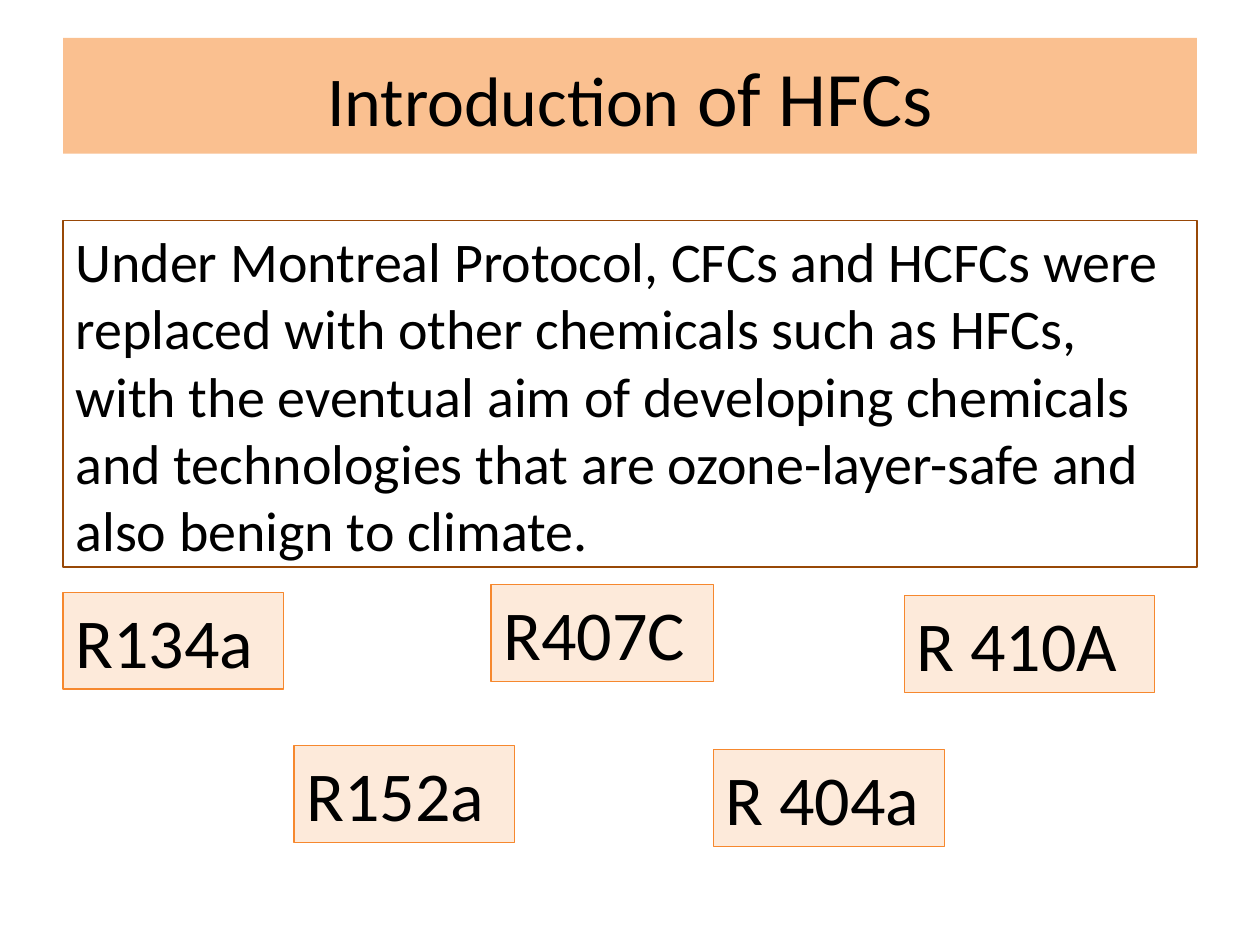
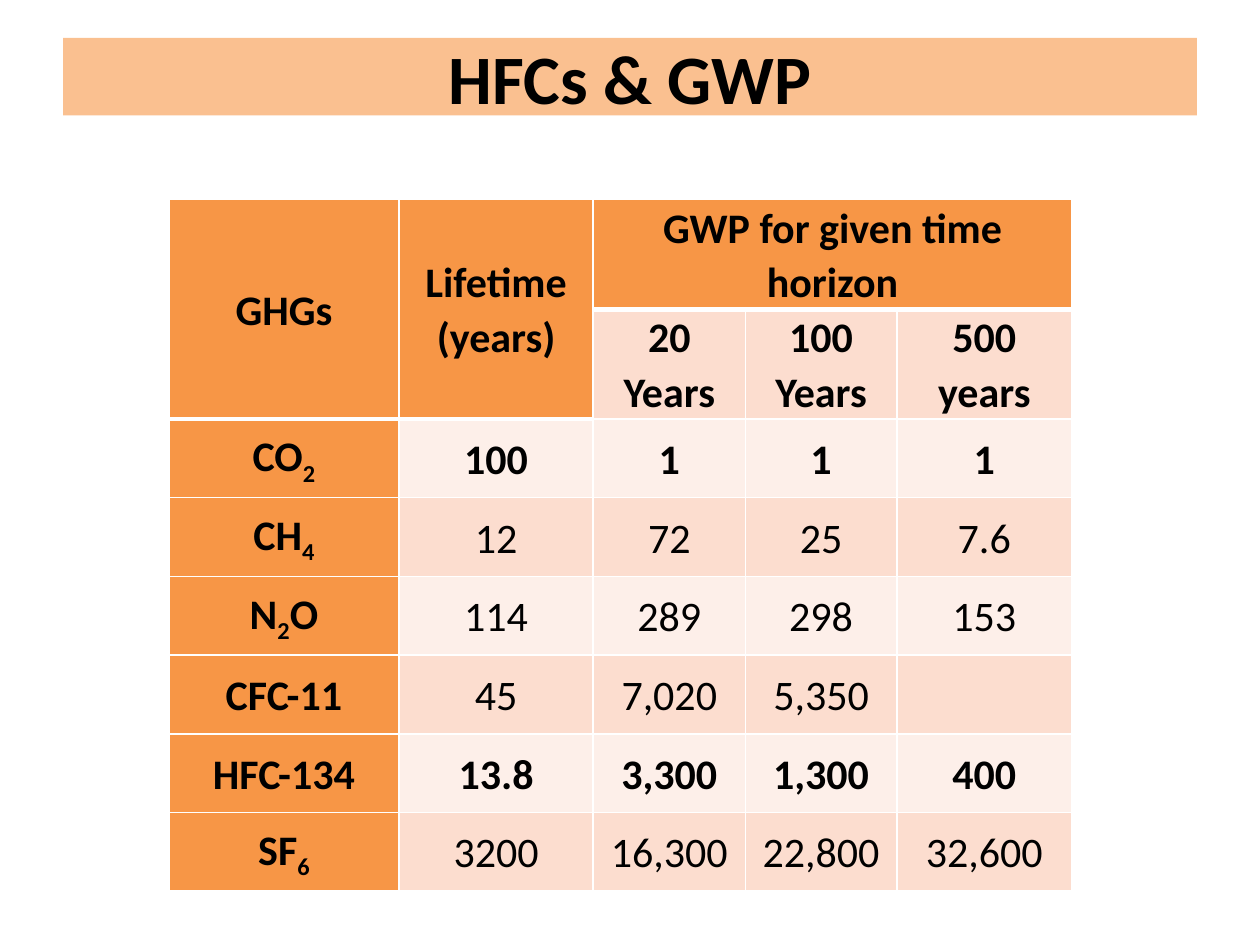
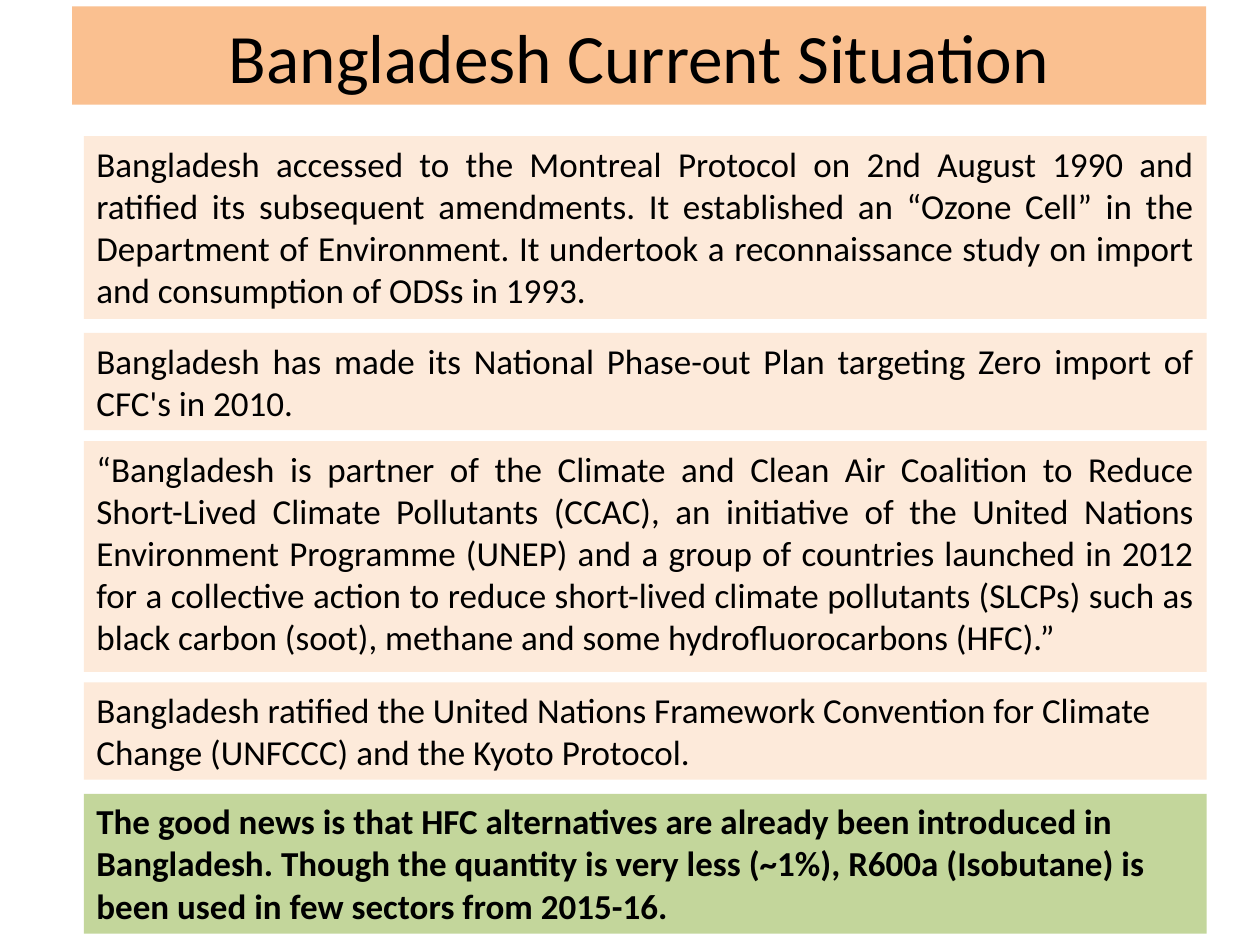
from dataclasses import dataclass

from lxml.etree import SubElement
from pptx import Presentation
from pptx.dml.color import RGBColor
from pptx.enum.text import MSO_ANCHOR, MSO_AUTO_SIZE, PP_ALIGN
from pptx.oxml.ns import qn
from pptx.util import Pt

FONT = "Calibri"
BLACK, WHITE = "000000", "FFFFFF"
BAND, PALE, GREEN = "FAC090", "FDEADA", "C3D69B"
BROWN, ORANGE = "984807", "F6882E"
HEAD, ODD, EVEN = "F79646", "FCDDCF", "FDEFE9"


@dataclass
class Box:
    left: float
    top: float
    width: float
    height: float
    text: str
    size: float
    fill: str = ""
    line: str = ""
    align: PP_ALIGN = PP_ALIGN.LEFT
    bold: bool = False
    before: float = 0


def color(code: str) -> RGBColor:
    return RGBColor.from_string(code)


def paint(item, code: str) -> None:
    item.fill.solid()
    item.fill.fore_color.rgb = color(code)


def style(para, size: float, align: PP_ALIGN, bold: bool = False) -> None:
    para.alignment = align
    font = para.font
    font.name, font.size, font.bold = FONT, Pt(size), bold
    font.color.rgb = color(BLACK)


def add_box(slide, box: Box) -> None:
    shape = slide.shapes.add_textbox(
        Pt(box.left), Pt(box.top), Pt(box.width), Pt(box.height))
    if box.fill:
        paint(shape, box.fill)
    if box.line:
        shape.line.color.rgb = color(box.line)
        shape.line.width = Pt(0.75)
    frame = shape.text_frame
    frame.word_wrap = True
    frame.text = box.text
    para = frame.paragraphs[0]
    style(para, box.size, box.align, box.bold)
    para.space_before = Pt(box.before)


def add_page(deck, text: str, left: float, top: float, height: float,
             size: float, bold: bool = False):
    """Add a slide whose title sits on the orange band."""
    slide = deck.slides.add_slide(deck.slide_layouts[5])
    title = slide.shapes.title
    title.left, title.top = Pt(left), Pt(top)
    title.width, title.height = Pt(648), Pt(height)
    paint(title, BAND)
    frame = title.text_frame
    frame.auto_size = MSO_AUTO_SIZE.NONE
    frame.vertical_anchor = MSO_ANCHOR.MIDDLE
    frame.text = text
    style(frame.paragraphs[0], size, PP_ALIGN.CENTER, bold)
    return slide


def edge(row: int, col: int) -> float:
    """Width of the rule below a cell: thick under the header cells."""
    return 3 if row == 0 or (row == 1 and col < 2) else 1


def set_edges(cell, row: int, col: int) -> None:
    props = cell._tc.get_or_add_tcPr()
    top = edge(row - 1, col) if row else 1
    for side, width in zip("LRTB", (1, 1, top, edge(row, col))):
        line = SubElement(props, qn(f"a:ln{side}"), w=str(Pt(width)))
        fill = SubElement(line, qn("a:solidFill"))
        SubElement(fill, qn("a:srgbClr"), val=WHITE)


def set_cell(cell, text: str, fill: str, bold: bool) -> None:
    """Fill a cell; text between underscores becomes a subscript."""
    cell.margin_left = cell.margin_right = Pt(5)
    cell.margin_top = cell.margin_bottom = 0
    cell.vertical_anchor = MSO_ANCHOR.MIDDLE
    paint(cell, fill)
    para = cell.text_frame.paragraphs[0]
    style(para, 24, PP_ALIGN.CENTER, bold)
    para.line_spacing = 1.07
    for index, part in enumerate(text.split("_")):
        if part:
            run = para.add_run()
            run.text = part
            if index % 2:
                run._r.get_or_add_rPr().set("baseline", "-25000")


def add_intro(deck) -> None:
    slide = add_page(deck, "Introduction", 36, 21.6, 66.2, 40)
    tail = slide.shapes.title.text_frame.paragraphs[0].add_run()
    tail.text = " of HFCs"
    tail.font.size = Pt(44)
    add_box(slide, Box(
        36, 126, 648, 198,
        "Under Montreal Protocol, CFCs and HCFCs were replaced with other "
        "chemicals such as HFCs, with the eventual aim of developing "
        "chemicals and technologies that are ozone-layer-safe and also "
        "benign to climate.", 32, line=BROWN, before=6.4))
    gases = [
        (36, 338.4, 126, "R134a"), (168, 426.2, 126, "R152a"),
        (280.6, 334, 127.2, "R407C"), (407.6, 428.2, 132, "R 404a"),
        (516.8, 340.2, 143, "R 410A"),
    ]
    for left, top, width, name in gases:
        add_box(slide, Box(left, top, width, 55.4, name, 40, PALE, ORANGE))


def add_gwp(deck) -> None:
    slide = add_page(deck, "HFCs & GWP", 36, 21.6, 44.4, 39.6, True)
    rows = [
        ("GHGs", "Lifetime (years)", "GWP for given time horizon", "", ""),
        ("", "", "20 Years", "100 Years", "500 years"),
        ("CO_2_", "100", "1", "1", "1"),
        ("CH_4_", "12", "72", "25", "7.6"),
        ("N_2_O", "114", "289", "298", "153"),
        ("CFC-11", "45", "7,020", "5,350", ""),
        ("HFC-134", "13.8", "3,300", "1,300", "400"),
        ("SF_6_", "3200", "16,300", "22,800", "32,600"),
    ]
    widths = (131.5, 111, 87, 86.5, 100)
    heights = [39, 62.5] + [45] * 6
    table = slide.shapes.add_table(
        len(rows), len(widths), Pt(96.5), Pt(114),
        Pt(sum(widths)), Pt(sum(heights))).table
    table.first_row = table.horz_banding = False
    for column, width in zip(table.columns, widths):
        column.width = Pt(width)
    for line, height in zip(table.rows, heights):
        line.height = Pt(height)
    strong = {0, 1, 2, 6}
    for row, texts in enumerate(rows):
        for col, text in enumerate(texts):
            head = row == 0 or col == 0 or (row == 1 and col == 1)
            fill = HEAD if head else ODD if row % 2 else EVEN
            cell = table.cell(row, col)
            set_edges(cell, row, col)
            set_cell(cell, text, fill, col == 0 or row in strong)
    for start, end in (((0, 0), (1, 0)), ((0, 1), (1, 1)), ((0, 2), (0, 4))):
        table.cell(*start).merge(table.cell(*end))


def add_status(deck) -> None:
    slide = add_page(deck, "Bangladesh Current Situation",
                     41.2, 3.6, 56.2, 39.6)
    left, wide = 48, 641.5
    both = PP_ALIGN.JUSTIFY
    notes = [
        Box(left, 77.8, wide, 104.4,
            "Bangladesh accessed to the Montreal Protocol on 2nd August 1990 "
            "and ratified its subsequent amendments. It established an "
            "“Ozone Cell” in the Department of Environment. It undertook a "
            "reconnaissance study on import and consumption of ODSs in 1993.",
            20, PALE, align=both),
        Box(left, 190.2, wide, 55.6,
            "Bangladesh has made its National Phase-out Plan targeting Zero "
            "import of CFC's in 2010.", 20, PALE, align=both),
        Box(left, 252, wide, 132,
            "“Bangladesh is partner of the Climate and Clean Air Coalition to "
            "Reduce Short-Lived Climate Pollutants (CCAC), an initiative of "
            "the United Nations Environment Programme (UNEP) and a group of "
            "countries launched in 2012 for a collective action to reduce "
            "short-lived climate pollutants (SLCPs) such as black carbon "
            "(soot), methane and some hydrofluorocarbons (HFC).”",
            20, PALE, align=both, before=4),
        Box(left, 390, wide, 55.6,
            "Bangladesh ratified the United Nations Framework Convention for "
            "Climate Change (UNFCCC) and the Kyoto Protocol.", 20, PALE),
        Box(left, 453.6, wide, 80,
            "The good news is that HFC alternatives are already been "
            "introduced in Bangladesh. Though the quantity is very less "
            "(~1%), R600a (Isobutane) is been used in few sectors from "
            "2015-16.", 20, GREEN, bold=True),
    ]
    for note in notes:
        add_box(slide, note)


def main() -> None:
    deck = Presentation()
    deck.slide_width, deck.slide_height = Pt(720), Pt(540)
    add_intro(deck)
    add_gwp(deck)
    add_status(deck)
    deck.save("out.pptx")


if __name__ == "__main__":
    main()
